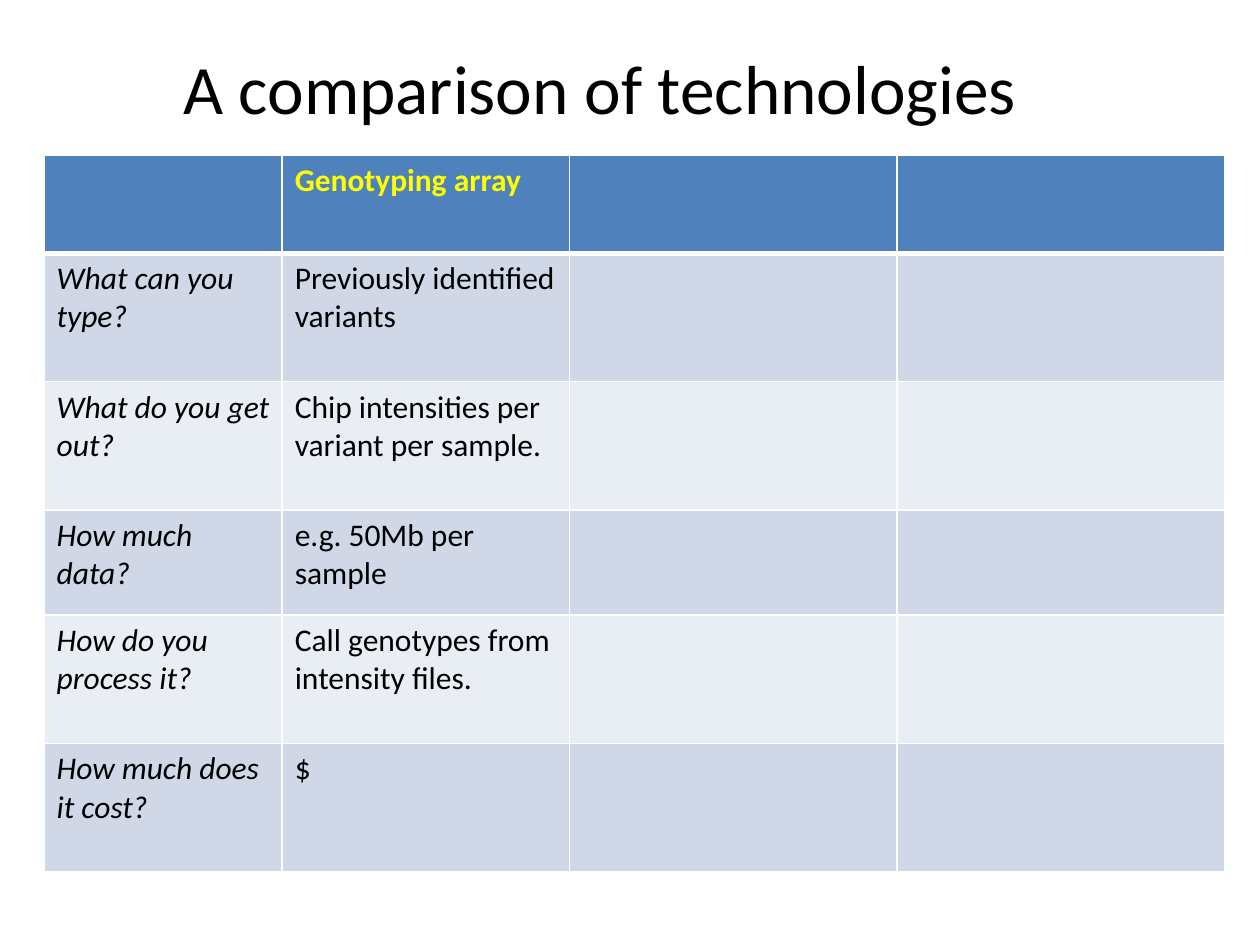
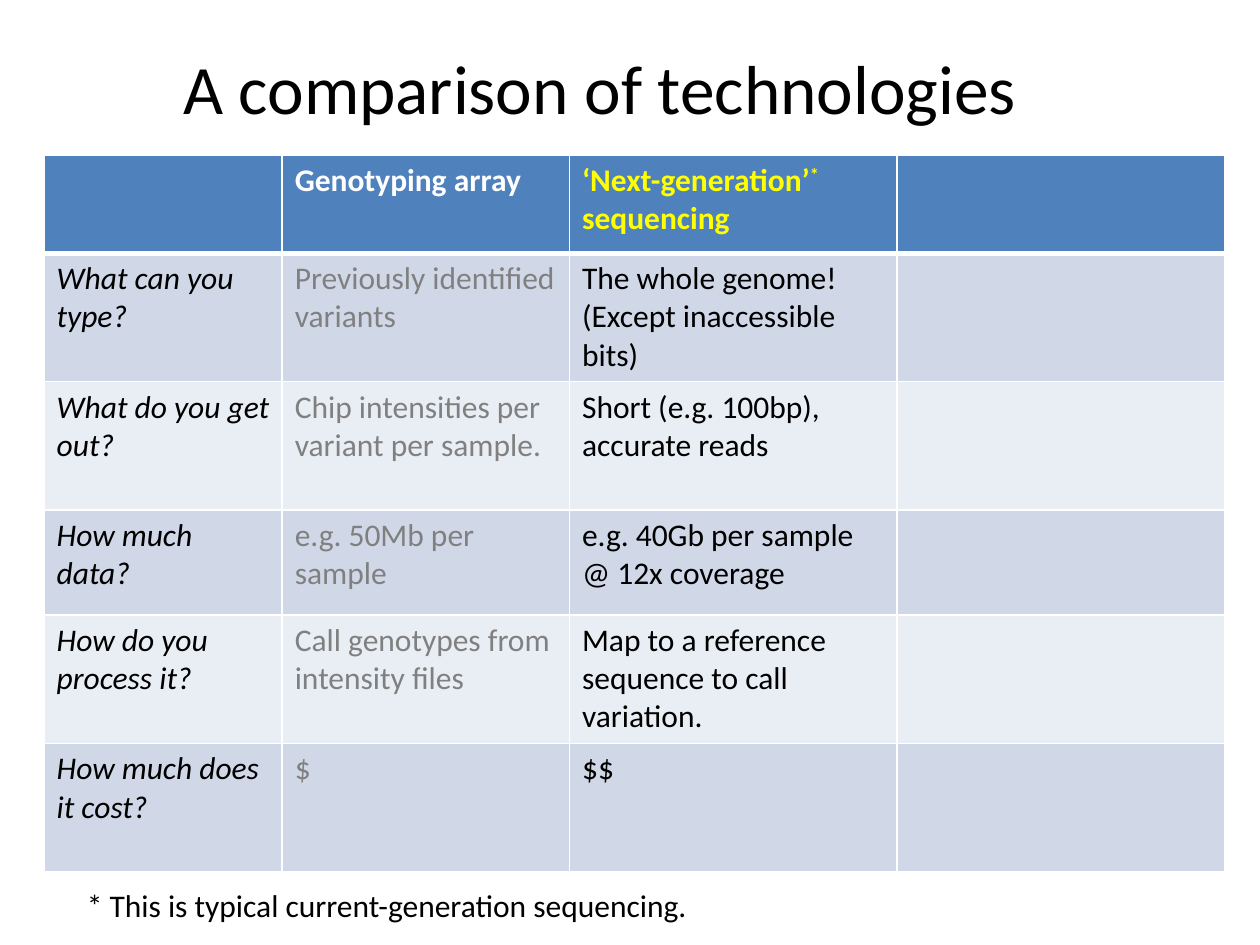
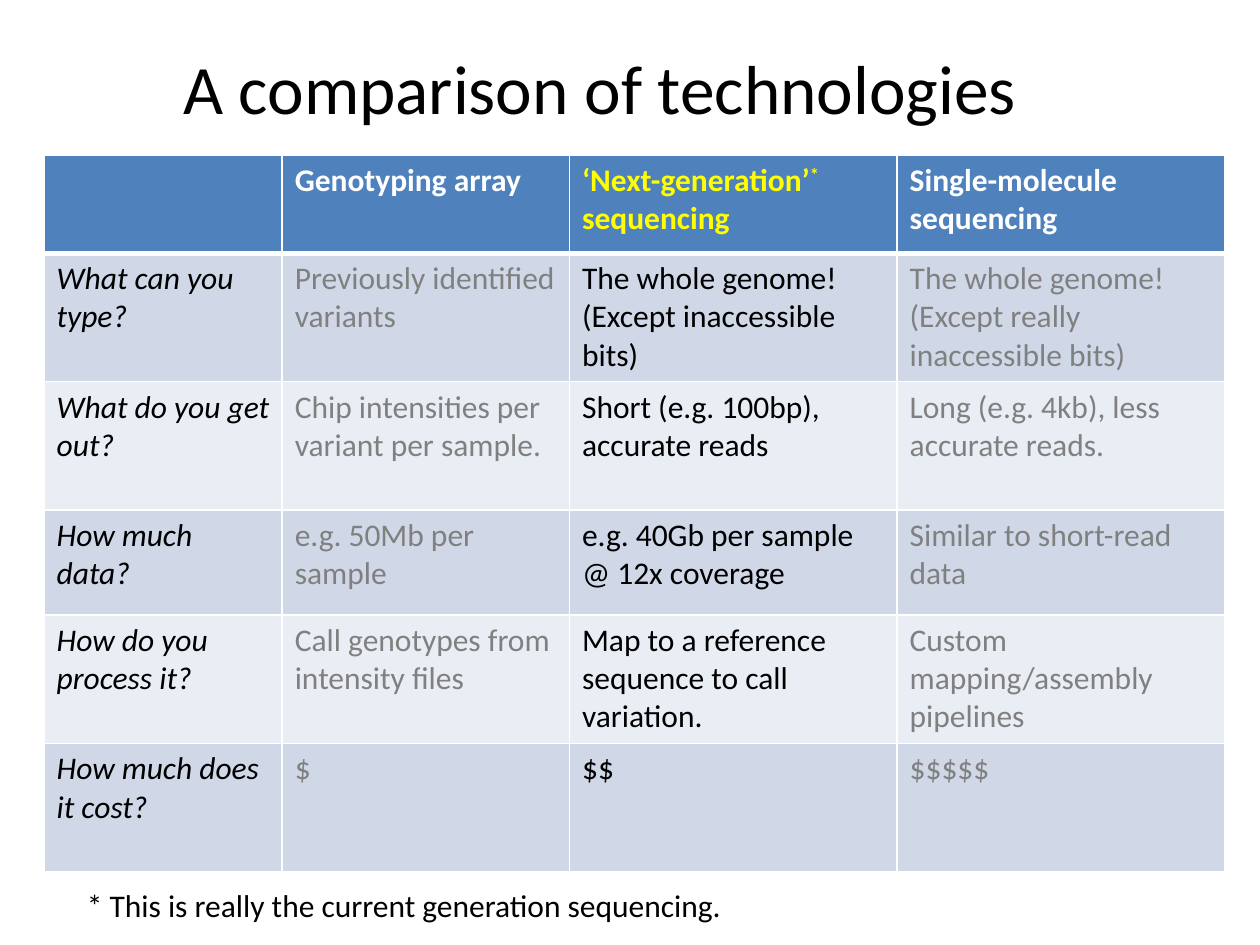
from lxml import etree
from pptx import Presentation
from pptx import util as u
from pptx.dml.color import RGBColor
from pptx.enum import text
from pptx.oxml import ns

COLORS = {
    "ink": "000000",
    "muted": "808080",
    "highlight": "FFFF00",
    "white": "FFFFFF",
    "header": "4F81BD",
    "odd_row": "D0D8E8",
    "even_row": "E9EDF4",
}
FONT = "Calibri"
TITLE = "A comparison of technologies"
COLUMN_WIDTHS = [1.89, 2.28, 2.6, 2.6]
ROW_HEIGHTS = [0.78, 1.02, 1.02, 0.83, 1.02, 1.02]

QUESTIONS = [
    "",
    "What can you type?",
    "What do you get out?",
    "How much data?",
    "How do you process it?",
    "How much does it cost?",
]
ARRAY = [
    "Genotyping array",
    "Previously identified variants",
    "Chip intensities per variant per sample.",
    "e.g. 50Mb per sample",
    "Call genotypes from intensity files",
    "$",
]
SHORT_READ = [
    "‘Next-generation’* sequencing",
    "The whole genome! (Except inaccessible bits)",
    "Short (e.g. 100bp), accurate reads",
    "e.g. 40Gb per sample @ 12x coverage",
    "Map to a reference sequence to call variation.",
    "$$",
]
SINGLE_MOLECULE = [
    "Single-molecule sequencing",
    "The whole genome! (Except really inaccessible bits)",
    "Long (e.g. 4kb), less accurate reads.",
    "Similar to short-read data",
    "Custom mapping/assembly pipelines",
    "$$$$$",
]
ARRAY_WITH_STOP = [
    words + "." if words.endswith("files") else words for words in ARRAY
]


def write_text(frame, words, size=18, color="ink", bold=False, italic=False,
               align=text.PP_ALIGN.LEFT, raised_star=False):
    paragraph = frame.paragraphs[0]
    paragraph.alignment = align
    paragraph.font.size = u.Pt(size)
    parts = words.partition("*") if raised_star else [words]
    for part in filter(None, parts):
        run = paragraph.add_run()
        run.text = part
        run.font.name = FONT
        run.font.size = u.Pt(size)
        run.font.bold = bold
        run.font.italic = italic
        run.font.color.rgb = RGBColor.from_string(COLORS[color])
        if raised_star and part == "*":
            run.font._element.set("baseline", "30000")


def set_borders(cell, top=1, bottom=1):
    properties = cell._tc.get_or_add_tcPr()
    widths = {"lnL": 1, "lnR": 1, "lnT": top, "lnB": bottom}
    for position, (side, width) in enumerate(widths.items()):
        line = etree.Element(ns.qn("a:" + side), w=str(u.Pt(width)))
        fill = etree.SubElement(line, ns.qn("a:solidFill"))
        etree.SubElement(fill, ns.qn("a:srgbClr"), val=COLORS["white"])
        properties.insert(position, line)


def place(shape, left, top, width, height):
    shape.left, shape.top = u.Inches(left), u.Inches(top)
    shape.width, shape.height = u.Inches(width), u.Inches(height)


def add_title(slide):
    title = slide.shapes.title
    place(title, 0.5, 0.3, 8.52, 0.77)
    title.text_frame.auto_size = text.MSO_AUTO_SIZE.NONE
    title.text_frame.vertical_anchor = text.MSO_ANCHOR.MIDDLE
    write_text(title.text_frame, TITLE, size=39.6, align=text.PP_ALIGN.CENTER)


def format_cell(cell, row, words, is_question, is_current):
    if row == 0:
        fill = "header"
        style = {"color": "highlight" if is_current else "white", "bold": True}
    else:
        fill = "odd_row" if row % 2 else "even_row"
        style = {"color": "ink" if is_question or is_current else "muted",
                 "italic": is_question}
    cell.fill.solid()
    cell.fill.fore_color.rgb = RGBColor.from_string(COLORS[fill])
    set_borders(cell, top=3 if row == 1 else 1, bottom=3 if row == 0 else 1)
    write_text(cell.text_frame, words, raised_star=True, **style)


def add_comparison(slide, technologies, current):
    frame = slide.shapes.add_table(
        len(ROW_HEIGHTS), len(COLUMN_WIDTHS), u.Inches(0.35), u.Inches(1.23),
        u.Inches(sum(COLUMN_WIDTHS)), u.Inches(sum(ROW_HEIGHTS)))
    table = frame.table
    for column, width in zip(table.columns, COLUMN_WIDTHS):
        column.width = u.Inches(width)
    for row, height in zip(table.rows, ROW_HEIGHTS):
        row.height = u.Inches(height)
    contents = [QUESTIONS] + technologies
    for column in range(len(COLUMN_WIDTHS)):
        for row in range(len(ROW_HEIGHTS)):
            words = contents[column][row] if column < len(contents) else ""
            format_cell(table.cell(row, column), row, words,
                        is_question=column == 0, is_current=column == current)


def add_footnote(slide, words):
    box = slide.shapes.add_textbox(0, 0, 0, 0)
    place(box, 0.59, 6.98, 8.58, 0.4)
    box.text_frame.word_wrap = True
    box.text_frame.auto_size = text.MSO_AUTO_SIZE.SHAPE_TO_FIT_TEXT
    write_text(box.text_frame, words)


def add_comparison_slide(presentation, technologies, current, footnote=None):
    slide = presentation.slides.add_slide(presentation.slide_layouts[5])
    add_title(slide)
    add_comparison(slide, technologies, current)
    if footnote:
        add_footnote(slide, footnote)


def main():
    presentation = Presentation()
    presentation.slide_width = u.Inches(10)
    presentation.slide_height = u.Inches(7.5)
    add_comparison_slide(presentation, [ARRAY_WITH_STOP], current=1)
    add_comparison_slide(presentation, [ARRAY, SHORT_READ], current=2,
                         footnote="* This is typical current-generation sequencing.")
    add_comparison_slide(presentation, [ARRAY, SHORT_READ, SINGLE_MOLECULE], current=2,
                         footnote="* This is really the current generation sequencing.")
    presentation.save("out.pptx")


if __name__ == "__main__":
    main()
